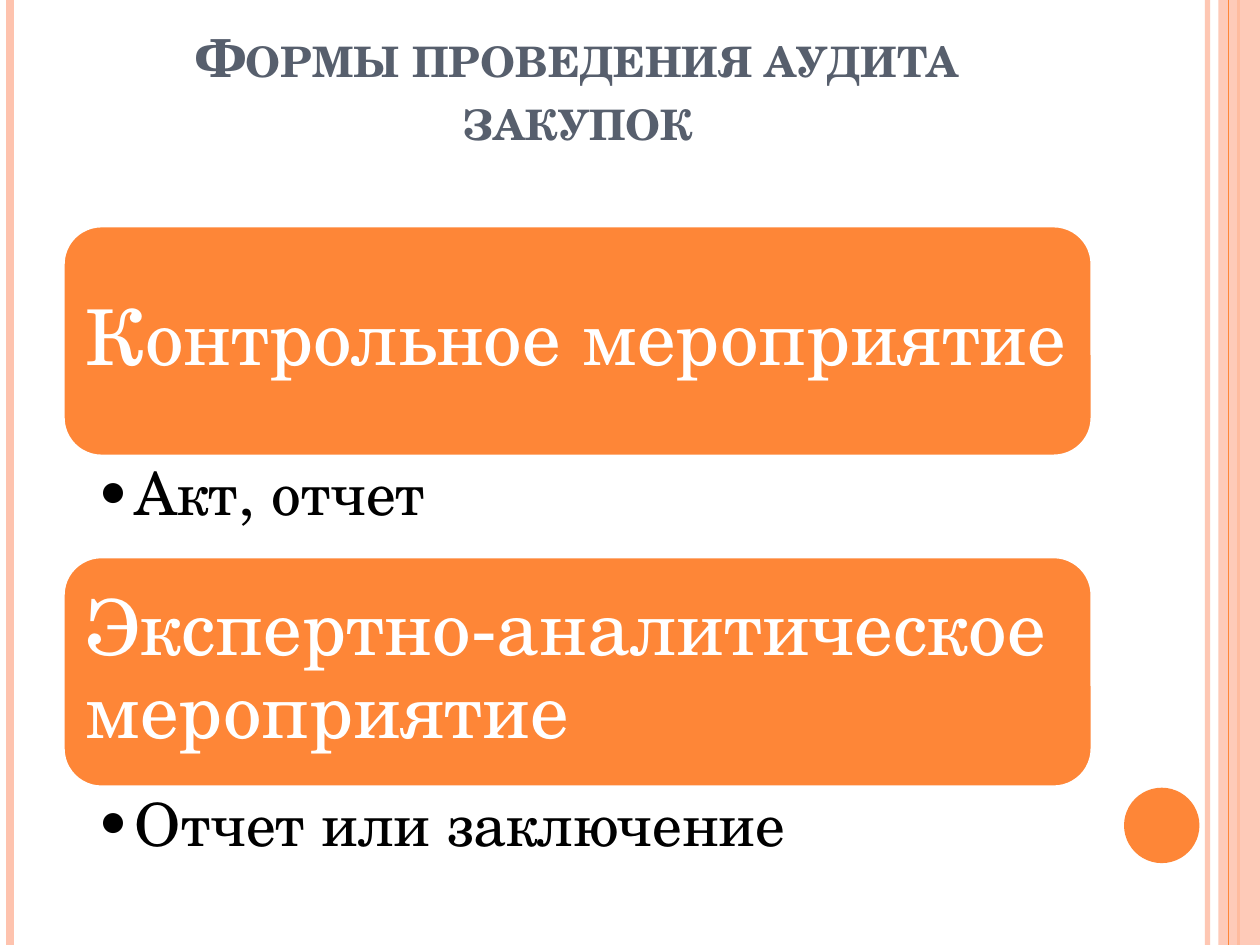
import dataclasses
import typing

import pptx
import pptx.dml.color
import pptx.enum.shapes
import pptx.enum.text
import pptx.oxml.ns
import pptx.util
from lxml import etree

Cm = pptx.util.Cm
Pt = pptx.util.Pt
MSO_SHAPE = pptx.enum.shapes.MSO_SHAPE
ANCHOR = pptx.enum.text.MSO_ANCHOR
ALIGN = pptx.enum.text.PP_ALIGN
qn = pptx.oxml.ns.qn

COLORS = {
    "accent": "FE8637",
    "pale": "FEC3AE",
    "title": "575F6D",
    "white": "FFFFFF",
    "black": "000000",
}
FONT = "TeX Gyre Schola"
SLIDE_WIDTH, SLIDE_HEIGHT = 25.4, 19.05
LEFT, WIDTH = 1.27, 20.75
TOP, BAR_HEIGHT, RESULT_HEIGHT = 4.55, 4.65, 2.02


@dataclasses.dataclass
class Stripe:
    x: float
    color: str
    weight: float
    opacity: int = 100


@dataclasses.dataclass
class AuditForm:
    name: str
    result: str


STRIPES_BELOW_BAND = [
    Stripe(24.34, "pale", 3, 93),
    Stripe(0.21, "pale", 4.5),
    Stripe(24.97, "accent", 1.5),
]
STRIPE_ABOVE_BAND = Stripe(24.76, "accent", 0.75)

AUDIT_FORMS = [
    AuditForm("Контрольное мероприятие", "Акт, отчет"),
    AuditForm("Экспертно-аналитическое мероприятие", "Отчет или заключение"),
]


def rgb(name: str) -> pptx.dml.color.RGBColor:
    return pptx.dml.color.RGBColor.from_string(COLORS[name])


def set_opacity(element: typing.Any, percent: int) -> None:
    """Add an alpha value to the first colour inside the element."""
    color = next(element.iter(qn("a:srgbClr")))
    etree.SubElement(color, qn("a:alpha")).set("val", str(percent * 1000))


def add_stripe(slide: typing.Any, stripe: Stripe) -> None:
    connector = slide.shapes.add_connector(
        pptx.enum.shapes.MSO_CONNECTOR.STRAIGHT,
        Cm(stripe.x), Cm(0), Cm(stripe.x), Cm(SLIDE_HEIGHT))
    connector.line.color.rgb = rgb(stripe.color)
    connector.line.width = Pt(stripe.weight)
    properties = connector._element.spPr
    if stripe.opacity < 100:
        set_opacity(properties, stripe.opacity)
    etree.SubElement(properties, qn("a:effectLst"))


def add_filled_shape(slide: typing.Any, kind: typing.Any, left: float, top: float,
                     width: float, height: float, color: str) -> typing.Any:
    shape = slide.shapes.add_shape(kind, Cm(left), Cm(top), Cm(width), Cm(height))
    shape.shadow.inherit = False
    shape.fill.solid()
    shape.fill.fore_color.rgb = rgb(color)
    shape.line.fill.background()
    return shape


def set_frame(frame: typing.Any, anchor: typing.Any, left: float, right: float,
              vertical: float) -> None:
    frame.word_wrap = True
    frame.auto_size = pptx.enum.text.MSO_AUTO_SIZE.NONE
    frame.vertical_anchor = anchor
    frame.margin_left, frame.margin_right = Cm(left), Cm(right)
    frame.margin_top = frame.margin_bottom = Cm(vertical)


def add_run(paragraph: typing.Any, text: str, size: float, color: str) -> typing.Any:
    run = paragraph.add_run()
    run.text = text
    run.font.name = FONT
    run.font.size = Pt(size)
    run.font.color.rgb = rgb(color)
    return run


def set_bullet(paragraph: typing.Any, indent: float) -> None:
    properties = paragraph._p.get_or_add_pPr()
    properties.set("marL", str(Cm(indent)))
    properties.set("indent", str(-Cm(indent)))
    etree.SubElement(properties, qn("a:buFont")).set("typeface", FONT)
    etree.SubElement(properties, qn("a:buChar")).set("char", "•")


def add_decoration(slide: typing.Any) -> None:
    for stripe in STRIPES_BELOW_BAND:
        add_stripe(slide, stripe)
    band = add_filled_shape(slide, MSO_SHAPE.RECTANGLE, 24.56, 0,
                            SLIDE_WIDTH - 24.56, SLIDE_HEIGHT, "pale")
    set_opacity(band._element.spPr, 87)
    add_stripe(slide, STRIPE_ABOVE_BAND)
    add_filled_shape(slide, MSO_SHAPE.OVAL, 22.66, 15.88, 1.52, 1.52, "accent")


def format_title(slide: typing.Any, text: str) -> None:
    title = slide.shapes.title
    title.left, title.top = Cm(LEFT), Cm(0.76)
    title.width, title.height = Cm(WIDTH), Cm(2.41)
    set_frame(title.text_frame, ANCHOR.BOTTOM, 0.8, 0.8, 0.13)
    paragraph = title.text_frame.paragraphs[0]
    paragraph.alignment = ALIGN.CENTER
    run = add_run(paragraph, text, 30, "title")
    run.font.bold = True
    run.font._element.set("cap", "small")


def add_audit_form(slide: typing.Any, form: AuditForm, top: float) -> None:
    bar = add_filled_shape(slide, MSO_SHAPE.ROUNDED_RECTANGLE, LEFT, top,
                           WIDTH, BAR_HEIGHT, "accent")
    bar.line.color.rgb = rgb("white")
    bar.line.width = Pt(2)
    set_frame(bar.text_frame, ANCHOR.MIDDLE, 0.23, 0.2, 0.23)
    name = bar.text_frame.paragraphs[0]
    name.alignment = ALIGN.LEFT
    name.line_spacing = 0.9
    add_run(name, form.name, 44, "white")

    box = slide.shapes.add_textbox(Cm(LEFT), Cm(top + BAR_HEIGHT),
                                   Cm(WIDTH), Cm(RESULT_HEIGHT))
    set_frame(box.text_frame, ANCHOR.TOP, 0.66, 0.86, 0.15)
    result = box.text_frame.paragraphs[0]
    result.level = 1
    result.line_spacing = 0.9
    set_bullet(result, 0.79)
    add_run(result, form.result, 34, "black")


def main() -> None:
    presentation = pptx.Presentation()
    presentation.slide_width = Cm(SLIDE_WIDTH)
    presentation.slide_height = Cm(SLIDE_HEIGHT)
    slide = presentation.slides.add_slide(presentation.slide_layouts[5])
    add_decoration(slide)
    format_title(slide, "Формы проведения аудита закупок")
    for index, form in enumerate(AUDIT_FORMS):
        add_audit_form(slide, form, TOP + index * (BAR_HEIGHT + RESULT_HEIGHT))
    presentation.save("out.pptx")


if __name__ == "__main__":
    main()
